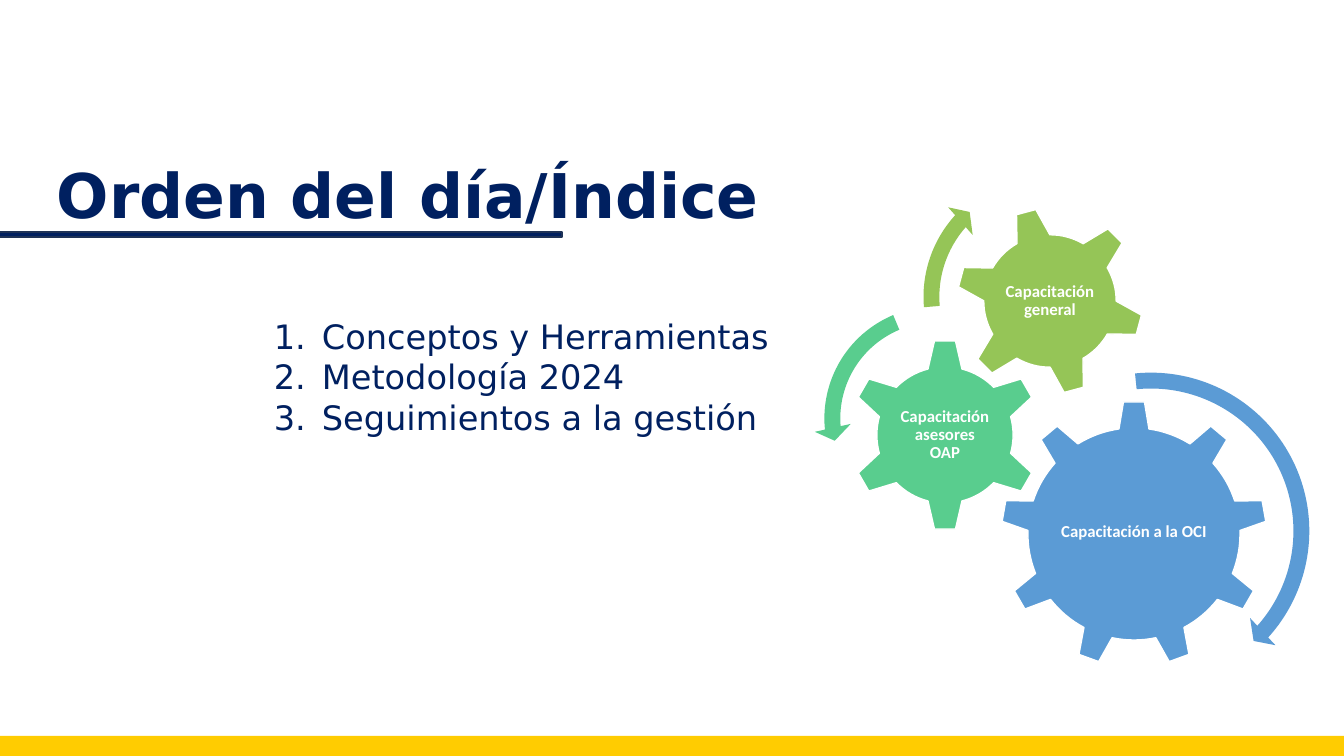
from math import cos, pi, radians, sin, atan2, hypot

from pptx import Presentation
from pptx import util as u
from pptx.dml.color import RGBColor
from pptx.enum import shapes, text
from pptx.oxml.ns import qn

PX = 914400 / 100.8
NAVY = RGBColor(0x00, 0x20, 0x60)
NAVY_EDGE = RGBColor(0x1E, 0x32, 0x56)
YELLOW = RGBColor(0xFF, 0xCC, 0x01)
BLUE = RGBColor(0x5B, 0x9B, 0xD5)
TEAL = RGBColor(0x59, 0xCD, 0x8E)
GREEN = RGBColor(0x95, 0xC5, 0x57)
WHITE = RGBColor(0xFF, 0xFF, 0xFF)

TOPICS = ["Conceptos y Herramientas", "Metodología 2024", "Seguimientos a la gestión"]
GEARS = [
    dict(label="Capacitación a la OCI", color=BLUE, center=(1134, 534), teeth=9, turn=-90,
         base=(105, 30), tip=(132, 21), inset=54),
    dict(label="Capacitación asesores OAP", color=TEAL, center=(945, 435), teeth=6, turn=-90,
         base=(66, 34), tip=(94, 21), inset=40),
    dict(label="Capacitación general", color=GREEN, center=(1050, 301), teeth=6, turn=-105,
         base=(64, 34), tip=(92, 20), inset=41),
]
ARROWS = [
    (shapes.MSO_SHAPE.CIRCULAR_ARROW, (982, 362, 338, 338), BLUE,
     (0.047, 2.99, 25.198, 158.534, 0.055)),
    (shapes.MSO_SHAPE.LEFT_CIRCULAR_ARROW, (814, 296, 245, 245), TEAL,
     (0.065, 4.3, 104.891, 148.378, 0.075)),
    (shapes.MSO_SHAPE.CIRCULAR_ARROW, (913, 165, 264, 264), GREEN,
     (0.06, 3.941, 133.138, 105.082, 0.07)),
]


def emu(px):
    """Turn pixels into EMU."""
    return u.Emu(round(px * PX))


def paint(shape, fill, line=None):
    """Give a shape a flat fill and an optional one-point outline."""
    shape.shadow.inherit = False
    shape.fill.solid()
    shape.fill.fore_color.rgb = fill
    if line is None:
        shape.line.fill.background()
    else:
        shape.line.color.rgb = line
        shape.line.width = u.Pt(1)


def add_preset(page, kind, box, fill, line=None):
    """Add a painted preset shape in a box."""
    shape = page.shapes.add_shape(kind, *map(emu, box))
    paint(shape, fill, line)
    return shape


def add_span(para, words, size, font, color, bold=False):
    """Add one formatted run to a paragraph."""
    span = para.add_run()
    span.text = words
    span.font.size = u.Pt(size)
    span.font.name = font
    span.font.color.rgb = color
    span.font.bold = bold


def add_frame(page, box):
    """Add a wrapping text box and return its frame."""
    frame = page.shapes.add_textbox(*map(emu, box)).text_frame
    frame.word_wrap = True
    return frame


def add_title(page, box):
    """Add the heading with the rule below it."""
    left, top, width, height = box
    para = add_frame(page, box).paragraphs[0]
    add_span(para, "Orden del día/Índice", 44, "DejaVu Sans", NAVY, True)
    add_preset(page, shapes.MSO_SHAPE.RECTANGLE, (left - 52, top + 80, 567, 5), NAVY, NAVY_EDGE)


def add_topics(page, box):
    """Add the numbered list of topics."""
    frame = add_frame(page, box)
    for index, topic in enumerate(TOPICS):
        para = frame.add_paragraph() if index else frame.paragraphs[0]
        layout = para._p.get_or_add_pPr()
        layout.set("marL", str(emu(54)))
        layout.set("indent", str(emu(-48)))
        number = layout.makeelement(qn("a:buAutoNum"), {"type": "arabicPeriod"})
        layout.append(number)
        add_span(para, topic, 24, "DejaVu Sans", NAVY)


def gear_outline(center, teeth, turn, base, tip):
    """Return the corner points of a gear in EMU."""
    base_far, base_wide = base
    tip_far, tip_wide = tip
    radius = hypot(base_far, base_wide / 2)
    half = atan2(base_wide / 2, base_far)
    gap = 2 * pi / teeth - 2 * half
    offsets = []
    for tooth in range(teeth):
        angle = radians(turn) + 2 * pi * tooth / teeth
        for far, side in ((base_far, -base_wide / 2), (tip_far, -tip_wide / 2),
                          (tip_far, tip_wide / 2)):
            offsets.append((far * cos(angle) - side * sin(angle),
                            far * sin(angle) + side * cos(angle)))
        for step in range(8):
            bend = angle + half + gap * step / 8
            offsets.append((radius * cos(bend), radius * sin(bend)))
    return [(emu(center[0] + x), emu(center[1] + y)) for x, y in offsets]


def add_gear(page, label, color, inset, **form):
    """Add a gear with its centred label."""
    start, *rest = gear_outline(**form)
    builder = page.shapes.build_freeform(*start, scale=1.0)
    builder.add_line_segments(rest, close=True)
    gear = builder.convert_to_shape()
    paint(gear, color, WHITE)
    frame = gear.text_frame
    frame.word_wrap = True
    frame.vertical_anchor = text.MSO_ANCHOR.MIDDLE
    frame.margin_left = frame.margin_right = emu(inset)
    frame.margin_top = frame.margin_bottom = 0
    para = frame.paragraphs[0]
    para.alignment = text.PP_ALIGN.CENTER
    para.line_spacing = 0.9
    add_span(para, label, 12, "Calibri", WHITE, True)


def add_gearwork(page):
    """Add the three gears and their turning arrows."""
    for gear in GEARS:
        add_gear(page, **gear)
    for kind, box, color, values in ARROWS:
        arrow = add_preset(page, kind, box, color)
        for index, value in enumerate(values):
            arrow.adjustments[index] = value


def main():
    """Build the agenda slide and save it."""
    deck = Presentation()
    deck.slide_width, deck.slide_height = emu(1344), emu(756)
    page = deck.slides.add_slide(deck.slide_layouts[6])
    add_preset(page, shapes.MSO_SHAPE.RECTANGLE, (0, 736, 1344, 20), YELLOW)
    add_title(page, (47, 152, 813, 85))
    add_topics(page, (258, 311, 846, 132))
    add_gearwork(page)
    deck.save("out.pptx")


if __name__ == "__main__":
    main()
